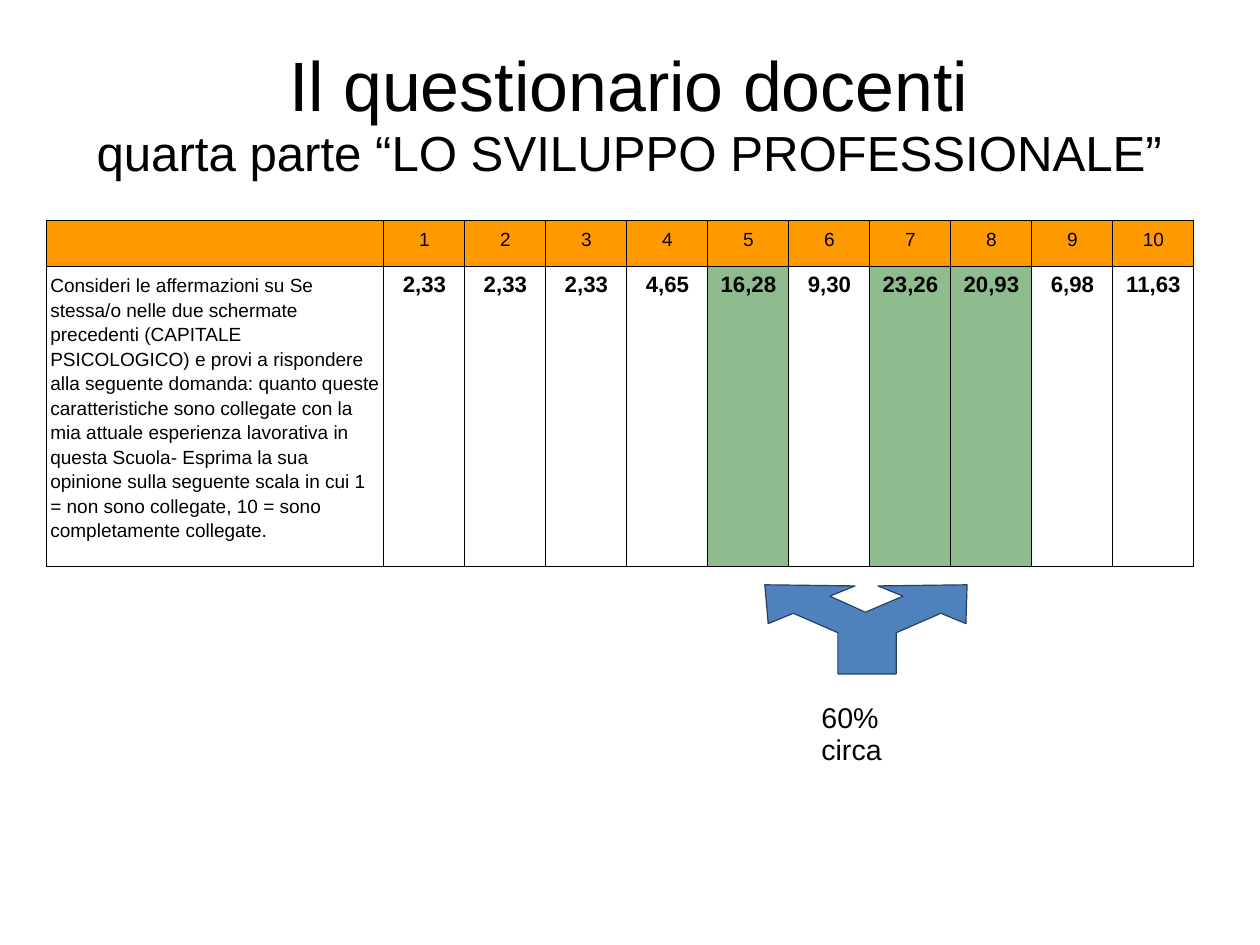
from dataclasses import dataclass

from lxml import etree
from pptx import Presentation
from pptx.dml.color import RGBColor
from pptx.enum.text import MSO_ANCHOR, PP_ALIGN
from pptx.oxml.ns import qn
from pptx.util import Cm, Inches, Pt

LEFT, CENTER = PP_ALIGN.LEFT, PP_ALIGN.CENTER
MIDDLE, TOP = MSO_ANCHOR.MIDDLE, MSO_ANCHOR.TOP
SLIDE_W, SLIDE_H = Cm(28), Cm(21)


@dataclass(frozen=True)
class Theme:
    font: str = "Arial"
    ink: str = "000000"
    header: str = "FF9900"
    highlight: str = "8FBC8F"
    arrow: str = "4F81BD"
    arrow_edge: str = "254061"
    title: float = 44
    subtitle: float = 31
    note: float = 18
    value: float = 14
    small: float = 12
    line: float = 0.75


@dataclass(frozen=True)
class CellStyle:
    size: float
    bold: bool
    align: PP_ALIGN
    side_inset: float
    spacing: float


@dataclass(frozen=True)
class Score:
    grade: int
    percent: str
    highlighted: bool = False


THEME = Theme()
HEADING = CellStyle(THEME.small, False, CENTER, 0.03, 1.15)
QUESTION = CellStyle(THEME.small, False, LEFT, 0.03, 1.15)
VALUE = CellStyle(THEME.value, True, CENTER, 0.1, 1.0)

QUESTION_TEXT = (
    "Consideri le affermazioni su Se stessa/o nelle due schermate precedenti "
    "(CAPITALE PSICOLOGICO) e provi a rispondere alla seguente domanda: quanto "
    "queste caratteristiche sono collegate con la mia attuale esperienza "
    "lavorativa in questa Scuola- Esprima la sua opinione sulla seguente scala "
    "in cui 1 = non sono collegate, 10 = sono completamente collegate."
)
SCORES = [
    Score(1, "2,33"), Score(2, "2,33"), Score(3, "2,33"), Score(4, "4,65"),
    Score(5, "16,28", True), Score(6, "9,30"), Score(7, "23,26", True),
    Score(8, "20,93", True), Score(9, "6,98"), Score(10, "11,63"),
]
# Outline of the forked arrow on a grid of hundredths of an inch
ARROW_POINTS = [
    (99, 1), (121, 10), (88, 24), (57, 10), (79, 1), (0, 0), (3, 34), (25, 25),
    (64, 42), (64, 78), (115, 78), (115, 42), (154, 25), (176, 34), (177, 0),
]


def across(percent: float) -> int:
    return round(SLIDE_W * percent / 100)


def down(percent: float) -> int:
    return round(SLIDE_H * percent / 100)


def color(value: str) -> RGBColor:
    return RGBColor.from_string(value)


def set_font(font, size: float, bold: bool = False) -> None:
    font.name, font.size, font.bold = THEME.font, Pt(size), bold
    font.color.rgb = color(THEME.ink)


def add_text_frame(page, left: float, top: float, width: float, height: float):
    box = page.shapes.add_textbox(across(left), down(top), across(width), down(height))
    box.text_frame.word_wrap = True
    box.text_frame.paragraphs[0].line_spacing = 0.93
    return box.text_frame


def add_title(page) -> None:
    frame = add_text_frame(page, 4.99, 3.95, 89.9, 16.57)
    frame.vertical_anchor = MIDDLE
    frame.margin_left = frame.margin_right = frame.margin_top = frame.margin_bottom = 0
    para = frame.paragraphs[0]
    para.alignment = CENTER
    title = para.add_run()
    title.text = "Il questionario docenti"
    set_font(title.font, THEME.title)
    para.add_line_break()
    subtitle = para.add_run()
    subtitle.text = "quarta parte “LO SVILUPPO PROFESSIONALE”"
    set_font(subtitle.font, THEME.subtitle)


def add_borders(cell) -> None:
    properties = cell._tc.get_or_add_tcPr()
    for side in ("a:lnL", "a:lnR", "a:lnT", "a:lnB"):
        line = etree.SubElement(properties, qn(side), w=str(Pt(THEME.line)))
        fill = etree.SubElement(line, qn("a:solidFill"))
        etree.SubElement(fill, qn("a:srgbClr"), val=THEME.ink)


def fill_cell(cell, text: str, style: CellStyle, fill: str | None = None) -> None:
    add_borders(cell)
    if fill:
        cell.fill.solid()
        cell.fill.fore_color.rgb = color(fill)
    else:
        cell.fill.background()
    cell.vertical_anchor = TOP
    cell.margin_left = cell.margin_right = Inches(style.side_inset)
    if text:
        cell.text = text
        para = cell.text_frame.paragraphs[0]
        para.alignment, para.line_spacing = style.align, style.spacing
        set_font(para.font, style.size, style.bold)


def add_score_table(page) -> None:
    question_width, score_width = across(26.75), across(6.43)
    heights = [down(3.99), down(31.7)]
    table = page.shapes.add_table(
        2, len(SCORES) + 1, across(3.72), down(23.34),
        question_width + score_width * len(SCORES), sum(heights),
    ).table
    table.first_row = False
    table.horz_banding = False
    for row, height in zip(table.rows, heights):
        row.height = height
    table.columns[0].width = question_width
    fill_cell(table.cell(0, 0), "", HEADING, THEME.header)
    fill_cell(table.cell(1, 0), QUESTION_TEXT, QUESTION)
    for column, score in enumerate(SCORES, start=1):
        table.columns[column].width = score_width
        fill_cell(table.cell(0, column), str(score.grade), HEADING, THEME.header)
        fill = THEME.highlight if score.highlighted else None
        fill_cell(table.cell(1, column), score.percent, VALUE, fill)


def add_forked_arrow(page) -> None:
    start, *others = ARROW_POINTS
    builder = page.shapes.build_freeform(*start, scale=Inches(0.01))
    builder.add_line_segments(others, close=True)
    arrow = builder.convert_to_shape(across(60.7), down(61.88))
    arrow.shadow.inherit = False
    arrow.fill.solid()
    arrow.fill.fore_color.rgb = color(THEME.arrow)
    arrow.line.color.rgb = color(THEME.arrow_edge)
    arrow.line.width = Pt(THEME.line)


def add_note(page) -> None:
    para = add_text_frame(page, 64.3, 73.76, 7.17, 7.98).paragraphs[0]
    para.text = "60% circa"
    set_font(para.font, THEME.note)


def main() -> None:
    deck = Presentation()
    deck.slide_width = SLIDE_W
    deck.slide_height = SLIDE_H
    page = deck.slides.add_slide(deck.slide_layouts[6])
    add_title(page)
    add_note(page)
    add_score_table(page)
    add_forked_arrow(page)
    deck.save("out.pptx")


if __name__ == "__main__":
    main()
